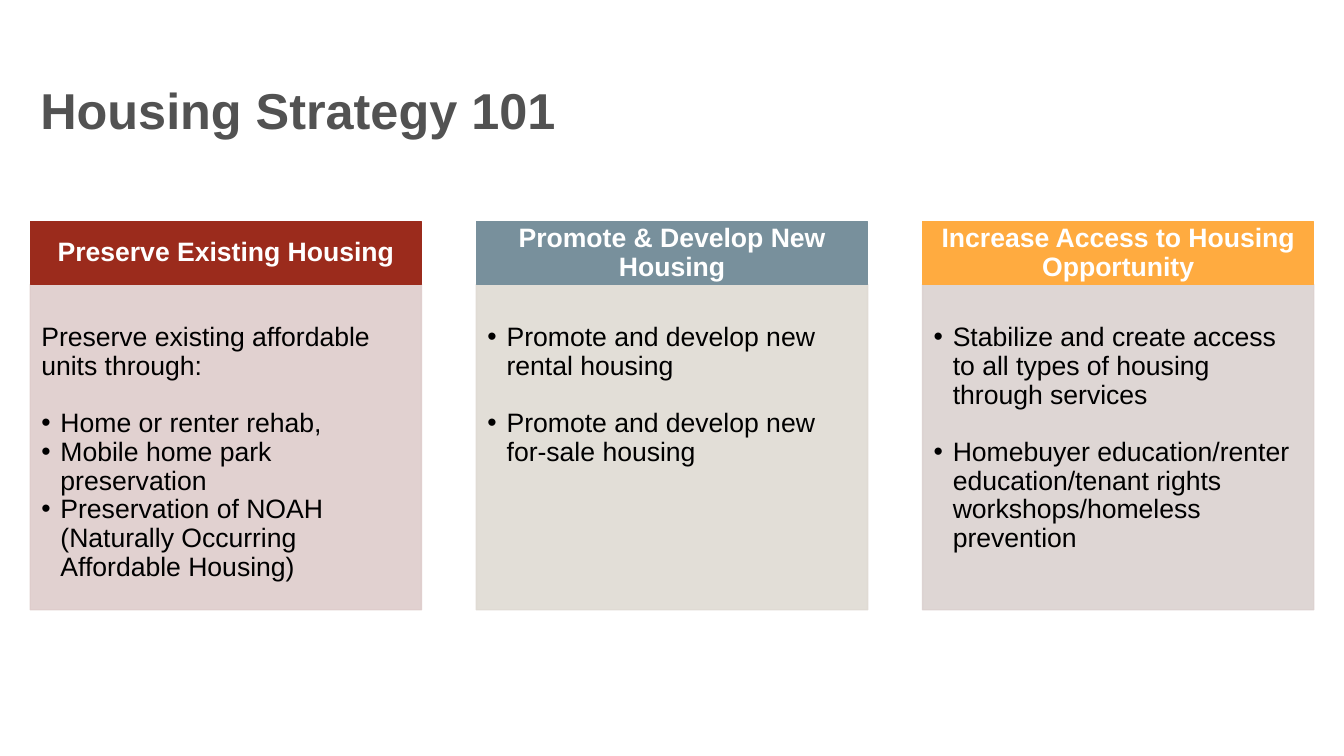
"""Build the Housing Strategy 101 slide with three strategy columns."""
from dataclasses import dataclass

from lxml import etree
from pptx import Presentation
from pptx.dml.color import RGBColor
from pptx.enum.shapes import MSO_SHAPE
from pptx.enum.text import MSO_ANCHOR, MSO_AUTO_SIZE, PP_ALIGN
from pptx.oxml.ns import qn
from pptx.util import Inches, Pt

RECTANGLE = MSO_SHAPE.RECTANGLE
TOP, MIDDLE = MSO_ANCHOR.TOP, MSO_ANCHOR.MIDDLE
LEFT, CENTER = PP_ALIGN.LEFT, PP_ALIGN.CENTER
NO_AUTOFIT = MSO_AUTO_SIZE.NONE
COMPARISON_LAYOUT = 4


@dataclass(frozen=True)
class Theme:
    font: str = "Arial"
    title_color: str = "525252"
    header_color: str = "FFFFFF"
    body_color: str = "000000"
    title_size: float = 36
    text_size: float = 19
    line_width: float = 1
    line_spacing: float = 0.9
    blank_line: float = 20.5
    panel_opacity: int = 89


@dataclass(frozen=True)
class Box:
    left: float
    top: float
    width: float
    height: float


@dataclass(frozen=True)
class Item:
    text: str
    bullet: bool = True
    gap: bool = False


@dataclass(frozen=True)
class Column:
    heading: str
    header_fill: str
    panel_fill: str
    items: tuple[Item, ...]


THEME = Theme()
TITLE_BOX = Box(0.3, 0.4, 11.5, 1.45)
FIRST_LEFT, LAST_LEFT, COLUMN_WIDTH = 0.3, 9.15, 3.88
HEADER_TOP, HEADER_HEIGHT, PANEL_HEIGHT = 2.2, 0.62, 3.23
TITLE_INSETS = (0.1, 0.05, 0.1, 0.05)
HEADER_INSETS = (0.15, 0.08, 0.15, 0.08)
PANEL_INSETS = (0.11, 0.39, 0.15, 0.17)
BULLET_INDENT = 0.19

COLUMNS = (
    Column("Preserve Existing Housing", "9B2B1C", "DECCCB", (
        Item("Preserve existing affordable units through:", bullet=False),
        Item("Home or renter rehab,", gap=True),
        Item("Mobile home park preservation"),
        Item("Preservation of NOAH (Naturally Occurring Affordable Housing)"),
    )),
    Column("Promote & Develop New Housing", "78909C", "DFDAD3", (
        Item("Promote and develop new rental housing"),
        Item("Promote and develop new for-sale housing", gap=True),
    )),
    Column("Increase Access to Housing Opportunity", "FFAB40", "DBD1CF", (
        Item("Stabilize and create access to all types of housing through services"),
        Item("Homebuyer education/renter education/tenant rights "
             "workshops/homeless prevention", gap=True),
    )),
)


def place(shape, box: Box) -> None:
    shape.left, shape.top = Inches(box.left), Inches(box.top)
    shape.width, shape.height = Inches(box.width), Inches(box.height)


def format_frame(frame, insets: tuple[float, ...], anchor) -> None:
    frame.word_wrap = True
    frame.auto_size = NO_AUTOFIT
    frame.vertical_anchor = anchor
    (frame.margin_left, frame.margin_top,
     frame.margin_right, frame.margin_bottom) = map(Inches, insets)


def paint(shape, color: str, opacity: int = 100) -> None:
    shape.fill.solid()
    shape.fill.fore_color.rgb = RGBColor.from_string(color)
    shape.line.color.rgb = RGBColor.from_string(color)
    shape.line.width = Pt(THEME.line_width)
    if opacity < 100:
        for fill_color in shape.fill._xPr.iter(qn("a:srgbClr")):
            etree.SubElement(fill_color, qn("a:alpha"), val=str(opacity * 1000))


def set_bullet(paragraph, bullet: bool) -> None:
    properties = paragraph._p.get_or_add_pPr()
    indent = Inches(BULLET_INDENT) if bullet else 0
    properties.set("marL", str(indent))
    properties.set("indent", str(-indent))
    if bullet:
        bullet_color = etree.SubElement(properties, qn("a:buClr"))
        etree.SubElement(bullet_color, qn("a:srgbClr"), val=THEME.body_color)
        etree.SubElement(properties, qn("a:buFont"), typeface=THEME.font)
        etree.SubElement(properties, qn("a:buChar"), char="•")
    else:
        etree.SubElement(properties, qn("a:buNone"))


def write(paragraph, text: str, size: float, color: str, bold: bool,
          alignment=LEFT, space_before: float = 0) -> None:
    paragraph.alignment = alignment
    paragraph.line_spacing = THEME.line_spacing
    paragraph.space_before = Pt(space_before)
    paragraph.space_after = Pt(0)
    run = paragraph.add_run()
    run.text = text
    run.font.name = THEME.font
    run.font.size = Pt(size)
    run.font.bold = bold
    run.font.color.rgb = RGBColor.from_string(color)


def draw_title(slide, text: str) -> None:
    title = slide.shapes.title
    place(title, TITLE_BOX)
    format_frame(title.text_frame, TITLE_INSETS, MIDDLE)
    write(title.text_frame.paragraphs[0], text, THEME.title_size,
          THEME.title_color, True)


def draw_header(slide, column: Column, left: float) -> None:
    header = slide.shapes.add_shape(
        RECTANGLE, Inches(left), Inches(HEADER_TOP),
        Inches(COLUMN_WIDTH), Inches(HEADER_HEIGHT))
    header.shadow.inherit = False
    paint(header, column.header_fill)
    format_frame(header.text_frame, HEADER_INSETS, MIDDLE)
    write(header.text_frame.paragraphs[0], column.heading, THEME.text_size,
          THEME.header_color, True, CENTER)


def draw_panel(panel, column: Column, left: float) -> None:
    place(panel, Box(left, HEADER_TOP + HEADER_HEIGHT, COLUMN_WIDTH, PANEL_HEIGHT))
    paint(panel, column.panel_fill, THEME.panel_opacity)
    frame = panel.text_frame
    format_frame(frame, PANEL_INSETS, TOP)
    for index, item in enumerate(column.items):
        paragraph = frame.add_paragraph() if index else frame.paragraphs[0]
        set_bullet(paragraph, item.bullet)
        write(paragraph, item.text, THEME.text_size, THEME.body_color, False,
              space_before=THEME.blank_line if item.gap else 0)


def main() -> None:
    presentation = Presentation()
    presentation.slide_width, presentation.slide_height = Inches(13.33), Inches(7.5)
    slide = presentation.slides.add_slide(
        presentation.slide_layouts[COMPARISON_LAYOUT])
    draw_title(slide, "Housing Strategy 101")
    title, *bodies = slide.placeholders
    pitch = (LAST_LEFT - FIRST_LEFT) / (len(COLUMNS) - 1)
    for index, (column, panel) in enumerate(zip(COLUMNS, bodies)):
        left = FIRST_LEFT + index * pitch
        draw_panel(panel, column, left)
        draw_header(slide, column, left)
    for spare in bodies[len(COLUMNS):]:
        spare.element.getparent().remove(spare.element)
    presentation.save("out.pptx")


if __name__ == "__main__":
    main()
